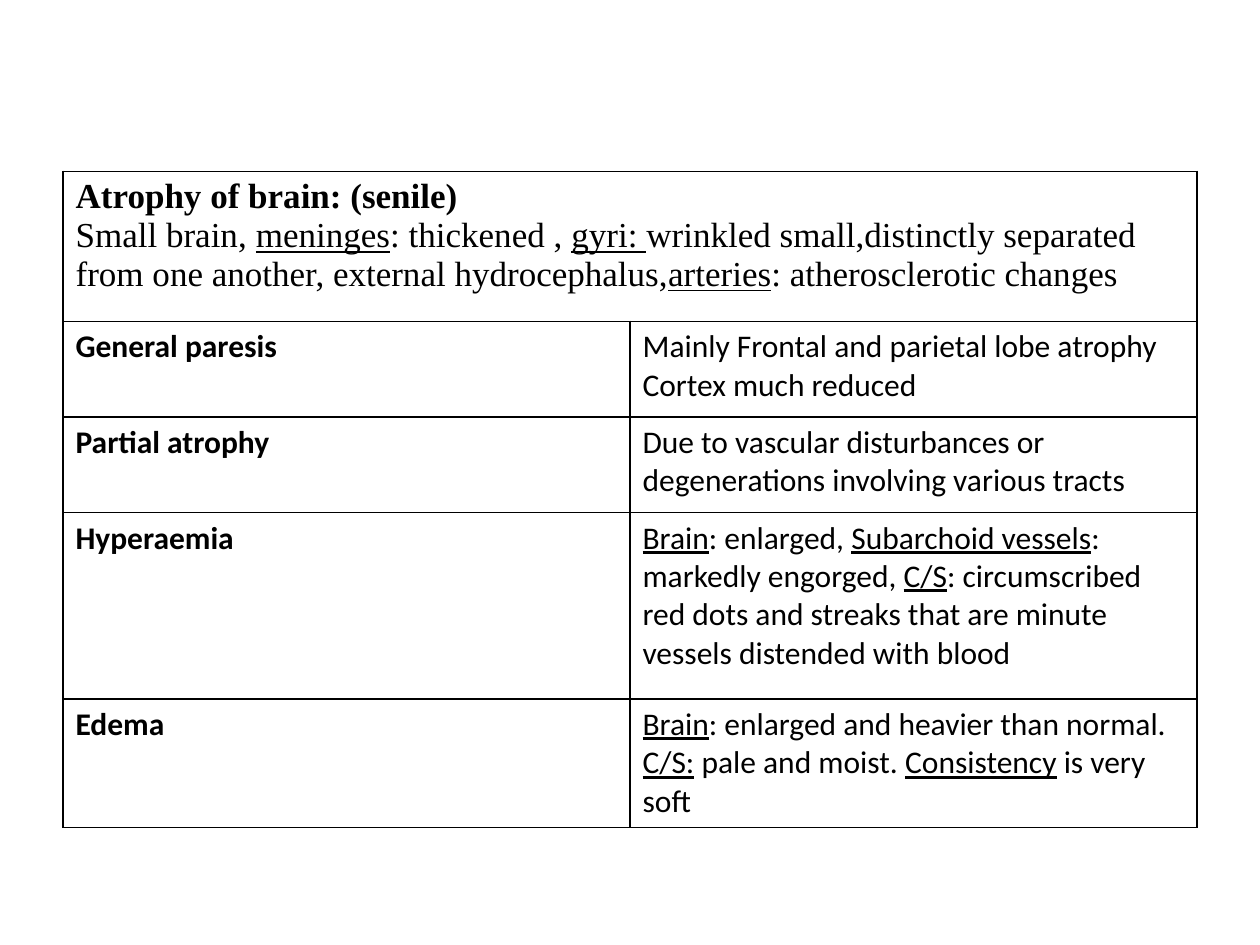
from lxml import etree
from pptx import Presentation
from pptx.dml.color import RGBColor
from pptx.oxml.ns import qn
from pptx.util import Inches, Pt

BLANK_LAYOUT = 6
BORDER_SIDES = ("a:lnL", "a:lnR", "a:lnT", "a:lnB")

HEADING = [
    "Atrophy of brain: (senile)",
    "Small brain, _meninges_: thickened , _gyri: _wrinkled small,distinctly separated "
    "from one another, external hydrocephalus,_arteries_: atherosclerotic changes",
]
# Underscores enclose underlined words.
CONDITIONS = [
    ("General paresis", ["Mainly Frontal and parietal lobe atrophy", "Cortex much reduced"]),
    ("Partial atrophy",
     ["Due to vascular disturbances or degenerations involving various tracts"]),
    ("Hyperaemia",
     ["_Brain_: enlarged, _Subarchoid vessels_: markedly engorged, _C/S_: circumscribed "
      "red dots and streaks that are minute vessels distended with blood"]),
    ("Edema",
     ["_Brain_: enlarged and heavier than normal. _C/S:_ pale and moist. "
      "_Consistency_ is very soft"]),
]
ROW_HEIGHTS = [1.19, 0.76, 0.76, 1.48, 1.02]


def color(value):
    return RGBColor.from_string(value)


def write(para, text, *, font, size, ink, bold=False):
    """Add text to a paragraph, underlining what stands between underscores."""
    for index, part in enumerate(text.split("_")):
        if part:
            span = para.add_run()
            span.text = part
            span.font.name = font
            span.font.size = Pt(size)
            span.font.bold = bold
            span.font.underline = index % 2 == 1
            span.font.color.rgb = color(ink)


class SlideBuilder:
    ink = "000000"
    paper = "FFFFFF"
    body_font, body_size = "Calibri", 18
    heading_font, heading_size = "Times New Roman", 20
    border_width = 1

    def __init__(self, slide):
        self.slide = slide

    def table(self, left, top, column_widths, row_heights):
        frame = self.slide.shapes.add_table(
            len(row_heights), len(column_widths), Inches(left), Inches(top),
            Inches(sum(column_widths)), Inches(sum(row_heights)))
        table = frame.table
        table.first_row = table.horz_banding = False
        for column, width in zip(table.columns, column_widths):
            column.width = Inches(width)
        for row, height in zip(table.rows, row_heights):
            row.height = Inches(height)
        for cell in table.iter_cells():
            self.borders(cell)
            cell.fill.solid()
            cell.fill.fore_color.rgb = color(self.paper)
        return table

    def borders(self, cell):
        properties = cell._tc.get_or_add_tcPr()
        for side in BORDER_SIDES:
            line = etree.SubElement(properties, qn(side), w=str(Pt(self.border_width)))
            fill = etree.SubElement(line, qn("a:solidFill"))
            etree.SubElement(fill, qn("a:srgbClr"), val=self.ink)

    def paragraphs(self, cell, texts, *, font=body_font, size=body_size,
                   bold=False, bold_first=False):
        frame = cell.text_frame
        for index, text in enumerate(texts):
            para = frame.add_paragraph() if index else frame.paragraphs[0]
            write(para, text, font=font, size=size, ink=self.ink,
                  bold=bold or (bold_first and index == 0))


def main():
    deck = Presentation()
    deck.slide_width, deck.slide_height = Inches(10), Inches(7.5)
    builder = SlideBuilder(deck.slides.add_slide(deck.slide_layouts[BLANK_LAYOUT]))

    table = builder.table(0.5, 1.36, [4.5, 4.5], ROW_HEIGHTS)
    heading = table.cell(0, 0)
    heading.merge(table.cell(0, 1))
    builder.paragraphs(heading, HEADING, font=builder.heading_font,
                       size=builder.heading_size, bold_first=True)
    for row, (condition, findings) in enumerate(CONDITIONS, start=1):
        builder.paragraphs(table.cell(row, 0), [condition], bold=True)
        builder.paragraphs(table.cell(row, 1), findings)

    deck.save("out.pptx")


if __name__ == "__main__":
    main()
